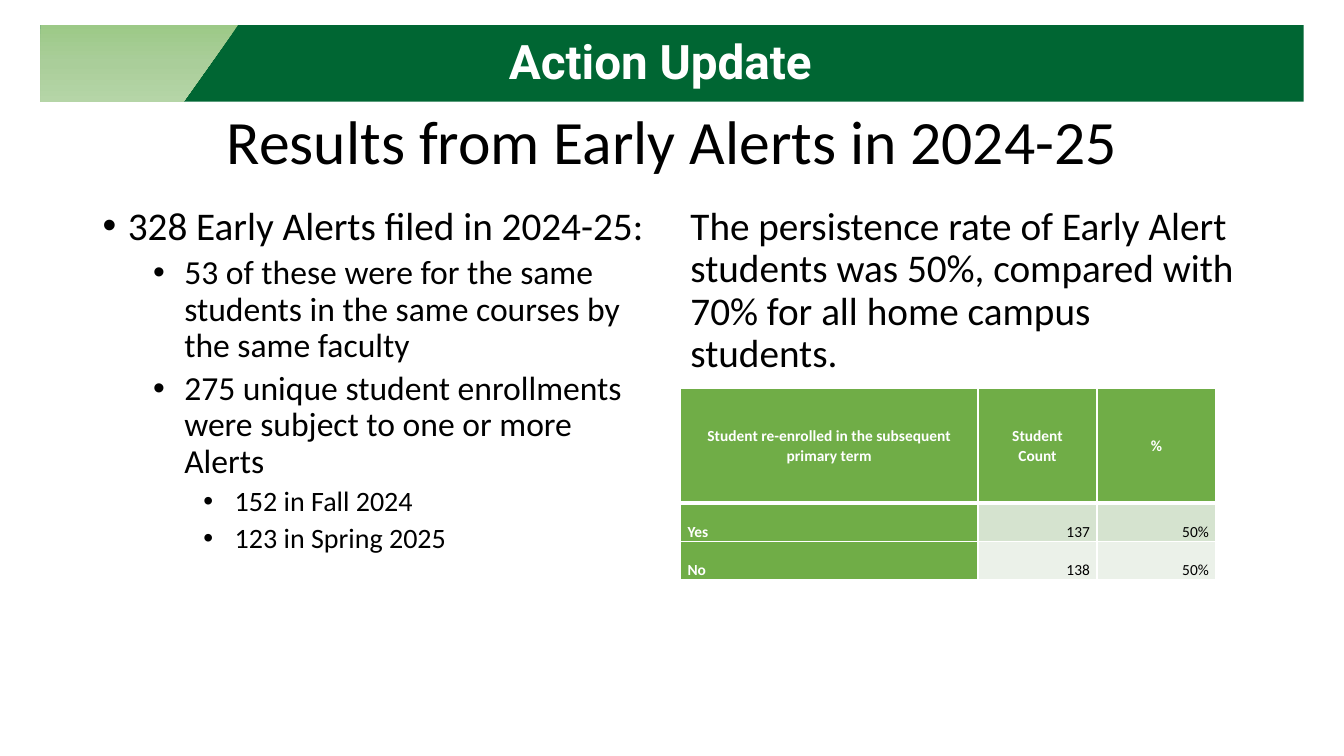
from copy import deepcopy
from dataclasses import dataclass

from pptx import Presentation
from pptx import util as u
from pptx.dml.color import RGBColor
from pptx.enum import text as t
from pptx.enum.shapes import MSO_SHAPE
from pptx.oxml.ns import qn
from lxml import etree

SCALE = 9144  # EMU per px, at 100 px to the inch


@dataclass(frozen=True)
class Theme:
    body_font: str = "Calibri"
    banner_font: str = "Roboto"
    black: str = "000000"
    white: str = "FFFFFF"
    banner: str = "006633"
    corner: tuple = ("9CC987", "AACE9A", "B5D5A7")
    head_fill: str = "70AD47"
    bands: tuple = ("D5E3CF", "EBF1E9")
    title: int = 44
    banner_size: int = 34
    levels: tuple = (28, 24, 20)
    table: int = 11


@dataclass(frozen=True)
class Box:
    x: int
    y: int
    w: int
    h: int

    def emu(self) -> tuple:
        return px(self.x), px(self.y), px(self.w), px(self.h)


@dataclass(frozen=True)
class Bullet:
    text: str
    level: int = 0


@dataclass(frozen=True)
class Level:
    indent: int
    hang: int
    before: int


THEME = Theme()
LEVELS = (Level(25, 25, 10), Level(81, 31, 5), Level(131, 31, 5))
TITLE = Box(92, 101, 1150, 84)
LEFT = Box(92, 200, 567, 476)
RIGHT = Box(675, 200, 567, 476)
BANNER = Box(40, 25, 1253, 76)
BANNER_TEXT = Box(80, 35, 1150, 58)
CORNER = ((40, 25), (236, 25), (182, 101), (40, 101))
COLUMNS = (295, 118, 118)
ROWS = (114, 38, 38)
TABLE = Box(675, 385, sum(COLUMNS), sum(ROWS))

BULLETS = (
    Bullet("328 Early Alerts filed in 2024-25:"),
    Bullet("53 of these were for the same students in the same courses by the same faculty", 1),
    Bullet("275 unique student enrollments were subject to one or more Alerts", 1),
    Bullet("152 in Fall 2024", 2),
    Bullet("123 in Spring 2025", 2),
)
RESULTS = (
    ("Student re-enrolled in the subsequent primary term", "Student\nCount", "%"),
    ("Yes", "137", "50%"),
    ("No", "138", "50%"),
)


def px(n: int) -> u.Emu:
    return u.Emu(n * SCALE)


def rgb(color: str) -> RGBColor:
    return RGBColor.from_string(color)


def add_run(p, words: str, size: int, color: str = THEME.black,
            font: str = THEME.body_font, bold: bool = False) -> None:
    r = p.add_run()
    r.text = words
    r.font.size, r.font.name, r.font.bold = u.Pt(size), font, bold
    r.font.color.rgb = rgb(color)


def set_up_frame(tf, anchor=t.MSO_ANCHOR.TOP):
    """Wrap and anchor the frame, and return its first paragraph."""
    tf.word_wrap, tf.auto_size = True, t.MSO_AUTO_SIZE.NONE
    tf.vertical_anchor = anchor
    p = tf.paragraphs[0]
    p.line_spacing = 0.9
    return p


def add_text_box(s, box: Box, anchor=t.MSO_ANCHOR.TOP):
    tf = s.shapes.add_textbox(*box.emu()).text_frame
    return tf, set_up_frame(tf, anchor)


def add_title(s, words: str) -> None:
    sp = s.shapes.title
    sp.left, sp.top, sp.width, sp.height = TITLE.emu()
    p = set_up_frame(sp.text_frame, t.MSO_ANCHOR.MIDDLE)
    p.alignment = t.PP_ALIGN.CENTER
    add_run(p, words, THEME.title)


def add_bullets(s, bullets: tuple) -> None:
    tf, p = add_text_box(s, LEFT)
    for i, bullet in enumerate(bullets):
        level = LEVELS[bullet.level]
        if i:
            p = tf.add_paragraph()
            p.line_spacing = 0.9
            p.space_before = u.Pt(level.before)
        p.level = bullet.level
        pPr = p._p.get_or_add_pPr()
        pPr.set("marL", str(px(level.indent)))
        pPr.set("indent", str(-px(level.hang)))
        etree.SubElement(pPr, qn("a:buFont")).set("typeface", "Arial")
        etree.SubElement(pPr, qn("a:buChar")).set("char", "•")
        add_run(p, bullet.text, THEME.levels[bullet.level])


def add_banner(s, words: str) -> None:
    sp = s.shapes.add_shape(MSO_SHAPE.RECTANGLE, *BANNER.emu())
    sp.shadow.inherit = False
    sp.fill.solid()
    sp.fill.fore_color.rgb = rgb(THEME.banner)
    sp.line.fill.background()
    _, p = add_text_box(s, BANNER_TEXT, t.MSO_ANCHOR.MIDDLE)
    p.alignment = t.PP_ALIGN.CENTER
    add_run(p, words, THEME.banner_size, THEME.white, THEME.banner_font, True)


def add_corner(s) -> None:
    """Draw the slanted gradient panel at the left end of the banner."""
    start, *rest = [(px(x), px(y)) for x, y in CORNER]
    builder = s.shapes.build_freeform(*start)
    builder.add_line_segments(rest, close=True)
    sp = builder.convert_to_shape()
    sp.shadow.inherit = False
    sp.line.fill.background()
    sp.fill.gradient()
    sp.fill.gradient_angle = 270
    stops = sp._element.spPr.find(".//" + qn("a:gsLst"))
    stops.insert(1, deepcopy(stops[0]))
    for i, (stop, color) in enumerate(zip(sp.fill.gradient_stops, THEME.corner)):
        stop.position = i / 2
        stop.color.rgb = rgb(color)


def set_borders(cell, top: int, bottom: int) -> None:
    tcPr = cell._tc.get_or_add_tcPr()
    widths = {"a:lnL": 1, "a:lnR": 1, "a:lnT": top, "a:lnB": bottom}
    for i, (tag, width) in enumerate(widths.items()):
        ln = etree.Element(qn(tag), w=str(u.Pt(width)))
        fill = etree.SubElement(ln, qn("a:solidFill"))
        etree.SubElement(fill, qn("a:srgbClr")).set("val", THEME.white)
        tcPr.insert(i, ln)


def fill_cell(cell, words: str, row: int, col: int) -> None:
    heading = row == 0 or col == 0
    cell.fill.solid()
    cell.fill.fore_color.rgb = rgb(THEME.head_fill if heading else THEME.bands[row - 1])
    cell.margin_left = cell.margin_right = px(7)
    cell.margin_top = cell.margin_bottom = 0
    cell.vertical_anchor = t.MSO_ANCHOR.BOTTOM if row else t.MSO_ANCHOR.MIDDLE
    set_borders(cell, 3 if row == 1 else 1, 1 if row else 3)
    tf = cell.text_frame
    for i, line in enumerate(words.split("\n")):
        p = tf.add_paragraph() if i else tf.paragraphs[0]
        p.line_spacing = 1.07
        if row == 0:
            p.alignment = t.PP_ALIGN.CENTER
        else:
            p.alignment = t.PP_ALIGN.RIGHT if col else t.PP_ALIGN.LEFT
        add_run(p, line, THEME.table, THEME.white if heading else THEME.black, bold=heading)


def add_results(s) -> None:
    table = s.shapes.add_table(len(ROWS), len(COLUMNS), *TABLE.emu()).table
    for column, width in zip(table.columns, COLUMNS):
        column.width = px(width)
    for i, (row, height) in enumerate(zip(table.rows, ROWS)):
        row.height = px(height)
        for j, cell in enumerate(row.cells):
            fill_cell(cell, RESULTS[i][j], i, j)


def main() -> None:
    prs = Presentation()
    prs.slide_width, prs.slide_height = px(1333), px(750)
    s = prs.slides.add_slide(prs.slide_layouts[5])
    add_title(s, "Results from Early Alerts in 2024-25")
    add_bullets(s, BULLETS)
    _, p = add_text_box(s, RIGHT)
    add_run(p, "The persistence rate of Early Alert students was 50%, compared with "
               "70% for all home campus students.", THEME.levels[0])
    add_banner(s, "Action Update")
    add_corner(s)
    add_results(s)
    prs.save("out.pptx")


if __name__ == "__main__":
    main()
